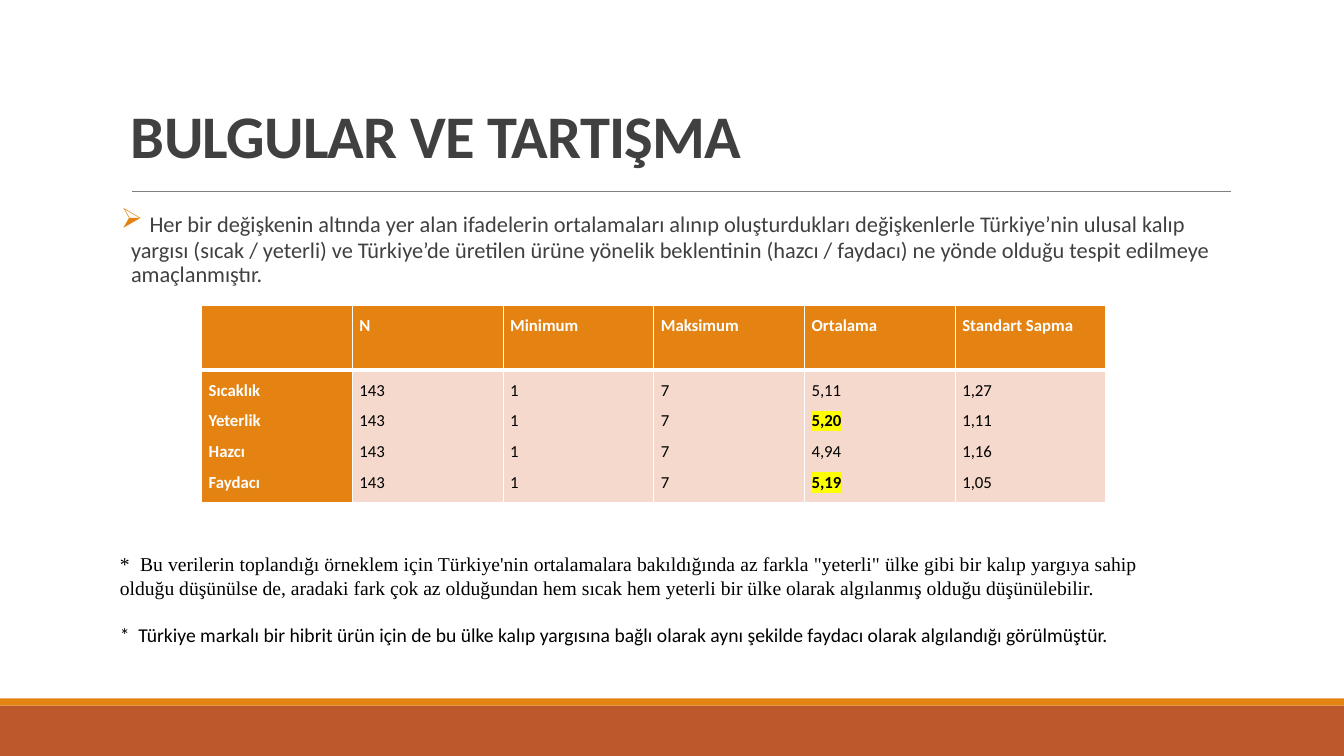
from dataclasses import dataclass

from lxml import etree
from pptx import Presentation
from pptx import util as u
from pptx.dml.color import RGBColor
from pptx.enum import shapes, text
from pptx.oxml import ns

I = u.Inches
JUST = text.PP_ALIGN.JUSTIFY


@dataclass(frozen=True)
class Theme:
    rust: str = "BD582C"
    orange: str = "E48312"
    blush: str = "F5D9CC"
    gray: str = "808080"
    dark: str = "404040"
    black: str = "000000"
    white: str = "FFFFFF"
    yellow: str = "FFFF00"
    sans: str = "Calibri"
    serif: str = "Times New Roman"
    title: float = 43.2
    mark: float = 20
    body: float = 16
    note: float = 14
    cell: float = 12


T = Theme()

HEADS = ["", "N", "Minimum", "Maksimum", "Ortalama", "Standart Sapma"]
ROWS = [
    ["Sıcaklık", "143", "1", "7", "5,11", "1,27"],
    ["Yeterlik", "143", "1", "7", "5,20", "1,11"],
    ["Hazcı", "143", "1", "7", "4,94", "1,16"],
    ["Faydacı", "143", "1", "7", "5,19", "1,05"],
]
PEAKS = {"5,20", "5,19"}
BODY = ("Her bir değişkenin altında yer alan ifadelerin ortalamaları alınıp "
        "oluşturdukları değişkenlerle Türkiye’nin ulusal kalıp yargısı (sıcak / "
        "yeterli) ve Türkiye’de üretilen ürüne yönelik beklentinin (hazcı / "
        "faydacı) ne yönde olduğu tespit edilmeye amaçlanmıştır.")
NOTES = [
    ("*  Bu verilerin toplandığı örneklem için Türkiye'nin ortalamalara "
     "bakıldığında az farkla \"yeterli\" ülke gibi bir kalıp yargıya sahip "
     "olduğu düşünülse de, aradaki fark çok az olduğundan hem sıcak hem yeterli "
     "bir ülke olarak algılanmış olduğu düşünülebilir.", T.serif, 0),
    ("*  Türkiye markalı bir hibrit ürün için de bu ülke kalıp yargısına bağlı "
     "olarak aynı şekilde faydacı olarak algılandığı görülmüştür.", T.sans, 16.5),
]


def rgb(code):
    return RGBColor.from_string(code)


def put(obj, **vals):
    for key, val in vals.items():
        setattr(obj, key, val)


def node(root, tag, **vals):
    return etree.SubElement(root, ns.qn(tag), vals)


def tint(root, tag, code):
    """Append a colour inside the given element."""
    node(node(root, tag), "a:srgbClr", val=code)


def write(para, words, size, color, face=T.sans, bold=False):
    run = para.add_run()
    run.text = words
    put(run.font, size=u.Pt(size), name=face, bold=bold)
    run.font.color.rgb = rgb(color)
    return run


def frame(slide, box, **vals):
    area = slide.shapes.add_textbox(*map(I, box)).text_frame
    put(area, word_wrap=True, **vals)
    return area


def band(slide, box, color):
    bar = slide.shapes.add_shape(shapes.MSO_SHAPE.RECTANGLE, *map(I, box))
    bar.shadow.inherit = False
    bar.fill.solid()
    bar.fill.fore_color.rgb = rgb(color)
    bar.line.fill.background()


def footer(slide, box):
    x, y, w, h = box
    strip = 0.07
    band(slide, (x, y + strip, w, h - strip), T.rust)
    band(slide, (x, y, w, strip), T.orange)


def header(slide, box):
    x, y, w, h = box
    area = frame(slide, box, vertical_anchor=text.MSO_ANCHOR.BOTTOM)
    para = area.paragraphs[0]
    para.line_spacing = 0.85
    run = write(para, "BULGULAR VE TARTIŞMA", T.title, T.dark, bold=True)
    run.font._element.set("spc", "-50")
    # Rule below the title
    ends = x + 0.11, y + h + 0.16, x + w + 0.01, y + h + 0.16
    rule = slide.shapes.add_connector(
        shapes.MSO_CONNECTOR.STRAIGHT, *map(I, ends))
    rule.line.color.rgb = rgb(T.gray)
    rule.line.width = u.Pt(0.5)
    node(rule._element.spPr, "a:effectLst")


def intro(slide, box):
    area = frame(slide, box, margin_left=0, margin_right=0)
    para = area.paragraphs[0]
    put(para, line_spacing=0.9, space_before=u.Pt(12), space_after=u.Pt(2))
    write(para, " ", T.mark, T.dark)
    write(para, BODY, T.body, T.dark)
    # Arrow bullet with a hanging indent
    props = para._p.get_or_add_pPr()
    props.set("marL", str(I(0.1)))
    props.set("indent", str(-I(0.1)))
    tint(props, "a:buClr", T.orange)
    node(props, "a:buChar", char="➢")


def border(cell, **widths):
    """Draw white cell edges, placed ahead of the fill."""
    props = cell._tc.get_or_add_tcPr()
    for at, (side, width) in enumerate(widths.items()):
        edge = node(props, "a:ln" + side, w=str(u.Pt(width)))
        tint(edge, "a:solidFill", T.white)
        props.insert(at, edge)


def fill(cell, lines, back, color, bold):
    put(cell, margin_left=I(0.07), margin_right=I(0.07),
        margin_top=0, margin_bottom=0)
    cell.fill.solid()
    cell.fill.fore_color.rgb = rgb(back)
    area = cell.text_frame
    for at, words in enumerate(lines):
        para = area.add_paragraph() if at else area.paragraphs[0]
        put(para, alignment=JUST, line_spacing=1.5)
        peak = words in PEAKS
        run = write(para, words, T.cell, color, bold=bold or peak)
        if peak:
            props = run.font._element
            tint(props, "a:highlight", T.yellow)
            props.find(ns.qn("a:solidFill")).addnext(props[-1])


def stats(slide, box):
    x, y, w, h = box
    grid = slide.shapes.add_table(2, len(HEADS), *map(I, box)).table
    put(grid, first_row=False, horz_banding=False)
    top = 0.64
    for row, high in zip(grid.rows, (top, h - top)):
        row.height = I(high)
    for at, (head, lines) in enumerate(zip(HEADS, zip(*ROWS))):
        grid.columns[at].width = I(w / len(HEADS))
        upper, lower = grid.cell(0, at), grid.cell(1, at)
        fill(upper, [head], T.orange, T.white, True)
        border(upper, L=1, R=1, T=1, B=3)
        look = (T.blush, T.black, False) if at else (T.orange, T.white, True)
        fill(lower, lines, *look)
        border(lower, L=1, R=1, T=3, B=1)


def notes(slide, box):
    area = frame(slide, box)
    for at, (words, face, gap) in enumerate(NOTES):
        para = area.add_paragraph() if at else area.paragraphs[0]
        put(para, alignment=JUST, space_before=u.Pt(gap))
        write(para, words, T.note, T.black, face)


def main():
    deck = Presentation()
    put(deck, slide_width=I(13.33), slide_height=I(7.5))
    slide = deck.slides.add_slide(deck.slide_layouts[6])
    footer(slide, (0, 6.93, 13.33, 0.57))
    header(slide, (1.2, 0.85, 11, 0.89))
    intro(slide, (1.2, 2.02, 11, 0.95))
    stats(slide, (2, 3.03, 8.97, 1.96))
    notes(slide, (1.09, 5.43, 10.3, 1.04))
    deck.save("out.pptx")


if __name__ == "__main__":
    main()
